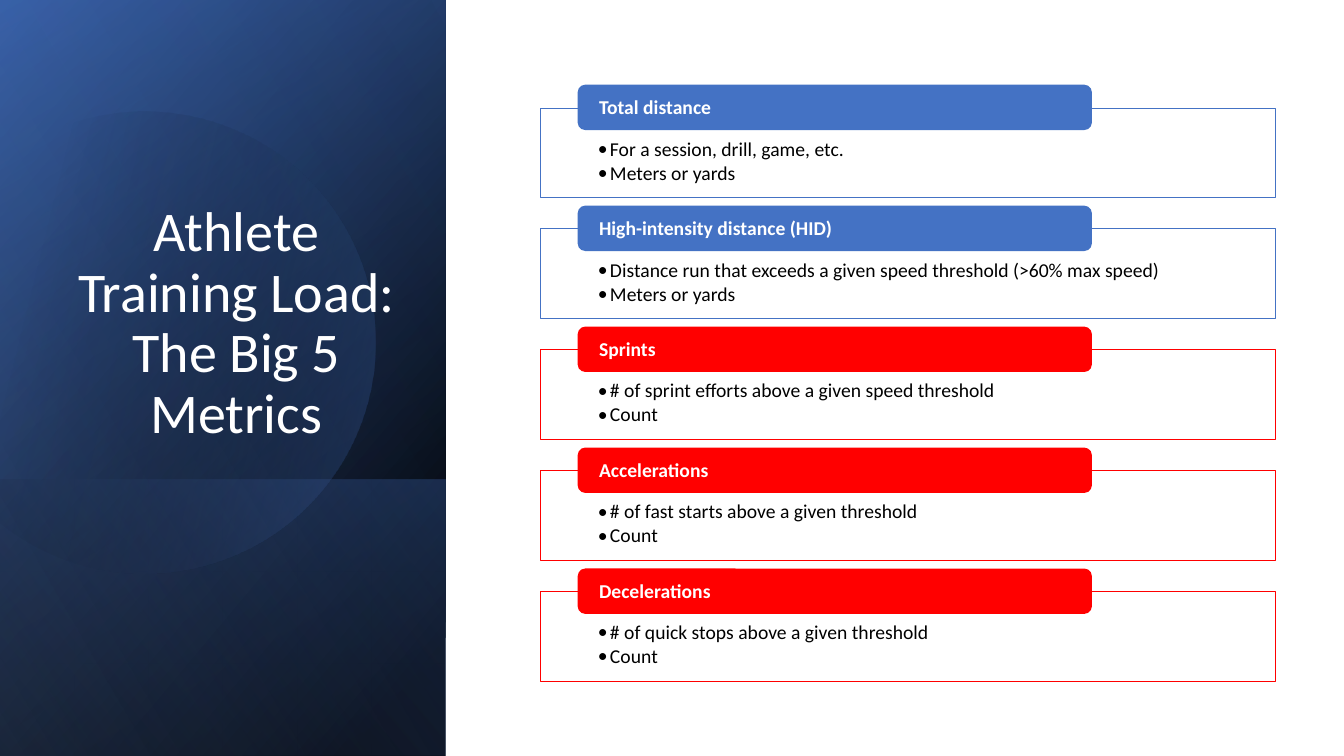
"""Build the slide on the five athlete training load metrics."""
from math import cos, radians, sin, tan

from lxml.etree import SubElement
from pptx import Presentation
from pptx.dml.color import RGBColor
from pptx.enum.shapes import MSO_SHAPE as Preset
from pptx.enum.text import MSO_ANCHOR as Anchor, PP_ALIGN as Align
from pptx.oxml import parse_xml
from pptx.oxml.ns import nsdecls, qn
from pptx.util import Pt

PX = 9144
FONT = "Calibri"
COLORS = {
    "blue": "4472C4", "deep": "2F5597", "pale": "8FAADC",
    "red": "FF0000", "white": "FFFFFF", "black": "000000",
}
TITLE = "Athlete Training Load: The Big 5 Metrics"
METRICS = [
    ("Total distance", "blue",
     ["For a session, drill, game, etc.", "Meters or yards"]),
    ("High-intensity distance (HID)", "blue",
     ["Distance run that exceeds a given speed threshold (>60% max speed)",
      "Meters or yards"]),
    ("Sprints", "red",
     ["# of sprint efforts above a given speed threshold", "Count"]),
    ("Accelerations", "red",
     ["# of fast starts above a given threshold", "Count"]),
    ("Decelerations", "red",
     ["# of quick stops above a given threshold", "Count"]),
]

SLIDE_W, SLIDE_H, PANEL_W = 1333, 750, 442
PANELS = [
    (0, [(8, "black", 100), (100, "deep", 100)], 50),
    (0, [(0, "black", 0), (99, "blue", 46)], 30),
    (476, [(2, "blue", 29), (100, "black", 30)], 130),
]
GLOW = ([(29, "black", 0), (100, "blue", 43)], 30)
SHEEN = (0, [(0, "black", 0), (99, "pale", 11)], 120)
GLOW_X, GLOW_Y, GLOW_R, GLOW_TURN = 143, 335, 229, 343.9
GLOW_START, GLOW_END, GLOW_CURVES = -117, 149, 4
CARD_X, CARD_Y, CARD_W, CARD_H, CARD_STEP = 536, 107, 729, 89, 120
HEAD_X, HEAD_Y, HEAD_W, HEAD_H = 573, 84, 510, 45
BULLET_INDENT = 12


def rgb(name):
    return RGBColor.from_string(COLORS[name])


def paint_gradient(shape, stops, angle):
    shape.shadow.inherit = False
    shape.line.fill.background()
    shape.fill.background()
    marks = "".join(
        f'<a:gs pos="{pos * 1000}"><a:srgbClr val="{COLORS[color]}">'
        f'<a:alpha val="{alpha * 1000}"/></a:srgbClr></a:gs>'
        for pos, color, alpha in stops)
    gradient = parse_xml(
        f'<a:gradFill {nsdecls("a")} rotWithShape="1"><a:gsLst>{marks}</a:gsLst>'
        f'<a:lin ang="{angle * 60000}" scaled="0"/></a:gradFill>')
    properties = shape._element.spPr
    properties.replace(properties.find(qn("a:noFill")), gradient)


def add_panel(shapes, top, stops, angle):
    height = SLIDE_H - top
    left = (PANEL_W - height) / 2
    panel = shapes.add_shape(
        Preset.RECTANGLE, int(left * PX), int((top - left) * PX),
        height * PX, PANEL_W * PX)
    panel.rotation = 90
    panel._element.spPr.find(qn("a:xfrm")).set("flipH", "1")
    paint_gradient(panel, stops, angle)


def add_glow(shapes):
    left = round(GLOW_X + GLOW_R * cos(radians(GLOW_END)))
    right, top, bottom = GLOW_X + GLOW_R, GLOW_Y - GLOW_R, GLOW_Y + GLOW_R
    outline = shapes.build_freeform(left, top, scale=PX)
    outline.add_line_segments([(right, top), (right, bottom), (left, bottom)])
    glow = outline.convert_to_shape()

    def point(angle, handle=0):
        x = GLOW_X + GLOW_R * (cos(angle) - handle * sin(angle)) - left
        y = GLOW_Y + GLOW_R * (sin(angle) + handle * cos(angle)) - top
        return f'<a:pt x="{round(x * PX)}" y="{round(y * PX)}"/>'

    step = radians(GLOW_END - GLOW_START) / GLOW_CURVES
    angles = [radians(GLOW_START) + n * step for n in range(GLOW_CURVES + 1)]
    reach = 4 / 3 * tan(step / 4)
    curves = "".join(
        f"<a:cubicBezTo>{point(a, reach)}{point(b, -reach)}{point(b)}"
        "</a:cubicBezTo>" for a, b in zip(angles, angles[1:]))
    curve_xml = parse_xml(
        f'<a:path {nsdecls("a")} w="{(right - left) * PX}" '
        f'h="{(bottom - top) * PX}"><a:moveTo>{point(angles[0])}</a:moveTo>'
        f"{curves}<a:close/></a:path>")
    contours = glow._element.spPr.find(qn("a:custGeom")).find(qn("a:pathLst"))
    contours.replace(contours[0], curve_xml)
    glow.rotation = GLOW_TURN
    paint_gradient(glow, *GLOW)


def add_box(shapes, preset, box, fill, line, anchor, insets):
    shape = shapes.add_shape(preset, *(n * PX for n in box))
    shape.shadow.inherit = False
    shape.fill.solid()
    shape.fill.fore_color.rgb = rgb(fill)
    if line:
        shape.line.color.rgb = rgb(line)
        shape.line.width = Pt(0.5)
    else:
        shape.line.fill.background()
    frame = shape.text_frame
    frame.word_wrap = True
    frame.vertical_anchor = anchor
    (frame.margin_left, frame.margin_top,
     frame.margin_right, frame.margin_bottom) = (n * PX for n in insets)
    return shape


def write(paragraph, text, size, color, align=Align.LEFT, bold=False):
    paragraph.alignment = align
    paragraph.line_spacing = 0.9
    run = paragraph.add_run()
    run.text = text
    run.font.name = FONT
    run.font.size = Pt(size)
    run.font.bold = bold
    run.font.color.rgb = rgb(color)


def add_metric(shapes, row, heading, color, details):
    offset = row * CARD_STEP
    card = add_box(
        shapes, Preset.RECTANGLE, (CARD_X, CARD_Y + offset, CARD_W, CARD_H),
        "white", color, Anchor.TOP, (57, 31, 57, 11))
    white = card._element.spPr.find(qn("a:solidFill"))[0]
    SubElement(white, qn("a:alpha"), val="90000")
    frame = card.text_frame
    for index, detail in enumerate(details):
        paragraph = frame.add_paragraph() if index else frame.paragraphs[0]
        paragraph.level = 1
        layout = paragraph._p.get_or_add_pPr()
        layout.set("marL", str(BULLET_INDENT * PX))
        layout.set("indent", str(-BULLET_INDENT * PX))
        SubElement(layout, qn("a:buFont"), typeface=FONT)
        SubElement(layout, qn("a:buChar"), char="•")
        paragraph.space_after = Pt(2)
        write(paragraph, detail, 14, "black")
        SubElement(paragraph._p, qn("a:endParaRPr"), sz="1400")
    head = add_box(
        shapes, Preset.ROUNDED_RECTANGLE,
        (HEAD_X, HEAD_Y + offset, HEAD_W, HEAD_H),
        color, None, Anchor.MIDDLE, (19, 3, 19, 2))
    write(head.text_frame.paragraphs[0], heading, 14, "white", bold=True)


def main():
    deck = Presentation()
    deck.slide_width, deck.slide_height = SLIDE_W * PX, SLIDE_H * PX
    slide = deck.slides.add_slide(deck.slide_layouts[5])
    shapes = slide.shapes
    title = shapes.title
    for panel in PANELS:
        add_panel(shapes, *panel)
    add_glow(shapes)
    add_panel(shapes, *SHEEN)

    shapes._spTree.append(title._element)
    title.left, title.top, title.width, title.height = (
        n * PX for n in (64, 185, 341, 262))
    title.text_frame.word_wrap = True
    title.text_frame.vertical_anchor = Anchor.BOTTOM
    write(title.text_frame.paragraphs[0], TITLE, 40, "white", Align.CENTER)

    for row, metric in enumerate(METRICS):
        add_metric(shapes, row, *metric)
    deck.save("out.pptx")


if __name__ == "__main__":
    main()
